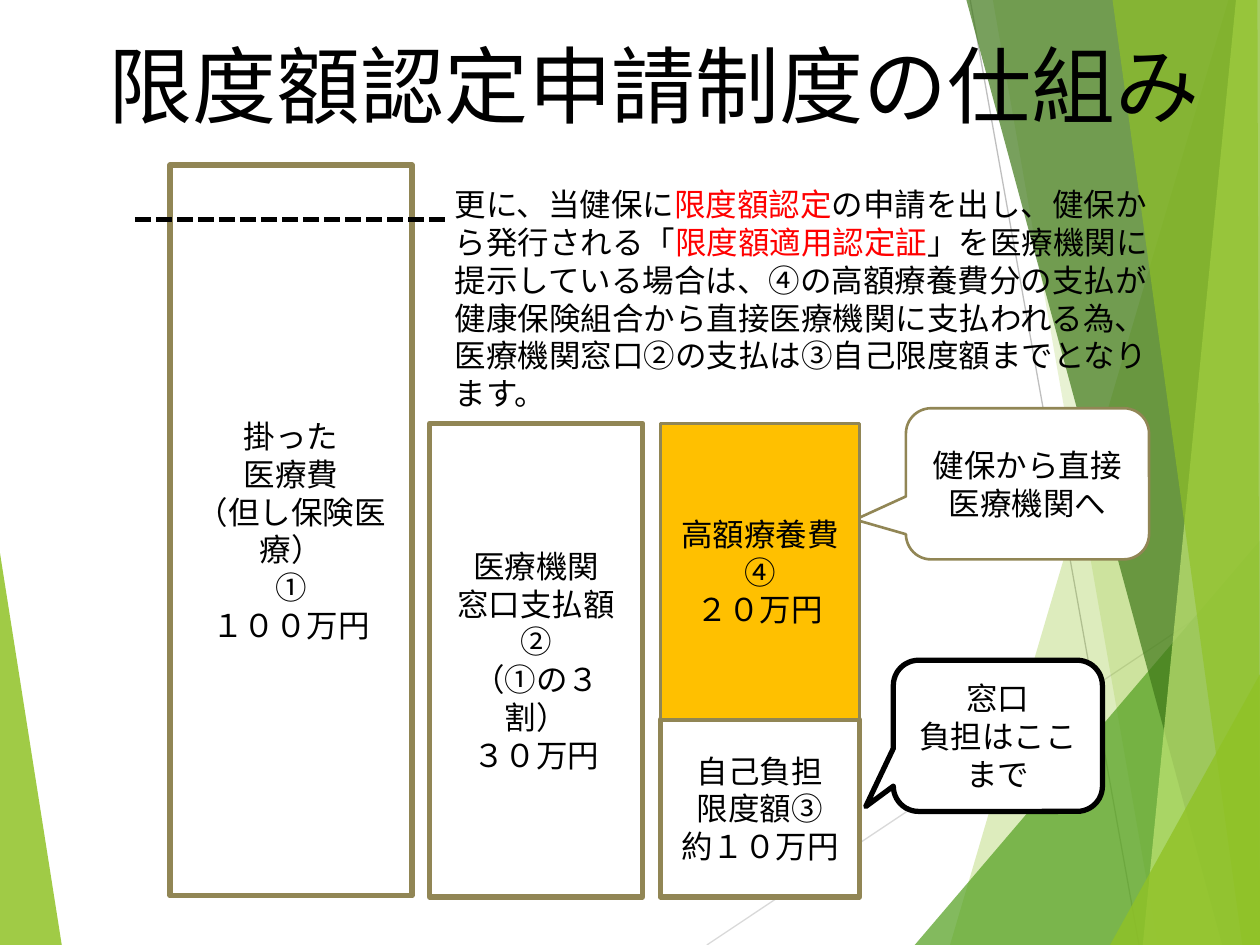
from lxml.etree import SubElement as Sub
from pptx import Presentation
from pptx.dml.color import RGBColor
from pptx.enum.dml import MSO_LINE as Dash
from pptx.enum.shapes import MSO_CONNECTOR as Conn, MSO_SHAPE as Kind
from pptx.enum.text import MSO_ANCHOR as Anchor, PP_ALIGN as Align
from pptx.oxml.ns import qn
from pptx.util import Inches, Pt

COLS, ROWS = 100, 75
FONT = "Noto Sans CJK JP"
BLACK, WHITE, RED = "000000", "FFFFFF", "FF0000"
TAN, GOLD, LIME = "918655", "FFC000", "90C226"

FACETS = [
    (LIME, 30, [(97.5, 0), (75.4, 75), (100, 75), (100, 0)]),
    (LIME, 20, [(78.8, 0), (91.9, 75), (100, 75), (100, 0)]),
    ("54A021", 72, [(72.6, 75), (100, 42.9), (100, 75)]),
    ("3F7819", 70, [(76.7, 0), (97, 75), (100, 75), (100, 0)]),
    ("C0E474", 70, [(98.1, 0), (90.7, 75), (100, 75), (100, 0)]),
    (LIME, 65, [(88.3, 0), (98.6, 75), (100, 75), (99.8, 0)]),
    (LIME, 80, [(88.1, 75), (100, 53.5), (100, 75)]),
]
CALLS = [
    ((70.9, 52.4, 16.6, 12), (-0.632, 0.468, 0.167), BLACK, 3,
     ["窓口", "負担はここまで"], FONT),
    ((71.9, 32.4, 19.3, 12), (-0.709, 0.237, 0.167), TAN, 1.5,
     ["健保から直接医療機関へ"], "Karla"),
]
BARS = [
    ((13.5, 13.1, 19.2, 58), WHITE, 3,
     ["掛った", "医療費", "（但し保険医療）", "①", "１００万円"]),
    ((34.1, 33.6, 16.9, 37.6), WHITE, 3,
     ["医療機関", "窓口支払額", "②", "（①の３割）", "３０万円"]),
    ((52.4, 57.1, 15.8, 14.1), WHITE, 3,
     ["自己負担", "限度額③", "約１０万円"]),
    ((52.4, 33.6, 15.8, 23.5), GOLD, 1.5, ["高額療養費④", "２０万円"]),
]
NOTE = [
    ("更に、当健保に", BLACK),
    ("限度額認定", RED),
    ("の申請を出し、健保から発行される「", BLACK),
    ("限度額適用認定証", RED),
    ("」を医療機関に提示している場合は、④の高額療養費分の支払が"
     "健康保険組合から直接医療機関に支払われる為、"
     "医療機関窓口②の支払は③自己限度額までとなります。", BLACK),
]


def grid(*cells):
    """Turn grid counts into lengths."""
    return [Inches(n * 10 / COLS) for n in cells]


def tint(hue):
    """Turn a hex string into a colour."""
    return RGBColor.from_string(hue)


def add_run(para, text, size, hue, face=FONT):
    """Add one run of text in its font and colour."""
    run = para.add_run()
    run.text = text
    font = run.font
    font.name, font.size = face, Pt(size)
    font.color.rgb = tint(hue)
    Sub(run._r.get_or_add_rPr(), qn("a:ea"), typeface=FONT)


def add_text(slide, box, runs, size):
    """Add a text box of one paragraph."""
    frame = slide.shapes.add_textbox(*grid(*box)).text_frame
    frame.word_wrap = True
    for text, hue in runs:
        add_run(frame.paragraphs[0], text, size, hue)


def add_box(slide, kind, box, fill, line, width, lines, face=FONT):
    """Add a filled shape with centred lines of text."""
    shape = slide.shapes.add_shape(kind, *grid(*box))
    shape.shadow.inherit = False
    shape.fill.solid()
    shape.fill.fore_color.rgb = tint(fill)
    shape.line.color.rgb = tint(line)
    shape.line.width = Pt(width)
    frame = shape.text_frame
    frame.word_wrap = True
    frame.vertical_anchor = Anchor.MIDDLE
    for i, text in enumerate(lines):
        para = frame.add_paragraph() if i else frame.paragraphs[0]
        para.alignment = Align.CENTER
        add_run(para, text, 18, BLACK, face)
    return shape


def add_call(slide, box, tail, line, width, lines, face):
    """Add a rounded callout with its tail."""
    shape = add_box(slide, Kind.ROUNDED_RECTANGULAR_CALLOUT, box, WHITE,
                    line, width, lines, face)
    for i, part in enumerate(tail):
        shape.adjustments[i] = part


def add_line(slide, ends, hue, width, dash=None):
    """Add a straight line."""
    link = slide.shapes.add_connector(Conn.STRAIGHT, *grid(*ends))
    link.line.color.rgb = tint(hue)
    link.line.width = Pt(width)
    if dash:
        link.line.dash_style = dash
    Sub(link._element.spPr, qn("a:effectLst"))


def add_facet(slide, hue, alpha, points):
    """Add a see-through polygon."""
    first, *rest = [grid(*point) for point in points]
    pen = slide.shapes.build_freeform(*first)
    pen.add_line_segments(rest)
    shape = pen.convert_to_shape()
    shape.shadow.inherit = False
    shape.line.fill.background()
    shape.fill.solid()
    shape.fill.fore_color.rgb = tint(hue)
    clr = shape._element.spPr.find(qn("a:solidFill"))[0]
    Sub(clr, qn("a:alpha"), val=str(alpha * 1000))


def main():
    """Build the slide and save it."""
    deck = Presentation()
    deck.slide_width, deck.slide_height = grid(COLS, ROWS)
    slide = deck.slides.add_slide(deck.slide_layouts[6])
    add_facet(slide, LIME, 85, [(0, 43.9), (4.9, 75), (0, 75)])
    add_line(slide, (56.1, 75, 100, 45.7), "D9D9D9", 0.75)
    add_line(slide, (77, 0, 90.4, 75), "BFBFBF", 0.75)
    for facet in FACETS:
        add_facet(slide, *facet)
    title = [("限度額認定申請制度の仕組み", BLACK)]
    add_text(slide, (7.6, 2.2, 89, 9.1), title, 48)
    add_text(slide, (35.1, 14.2, 57.5, 16.2), NOTE, 18)
    for call in CALLS:
        add_call(slide, *call)
    for box, fill, width, lines in BARS:
        add_box(slide, Kind.RECTANGLE, box, fill, TAN, width, lines)
    add_line(slide, (10.7, 17.4, 35.3, 17.4), BLACK, 3, Dash.SQUARE_DOT)
    deck.save("out.pptx")


if __name__ == "__main__":
    main()
